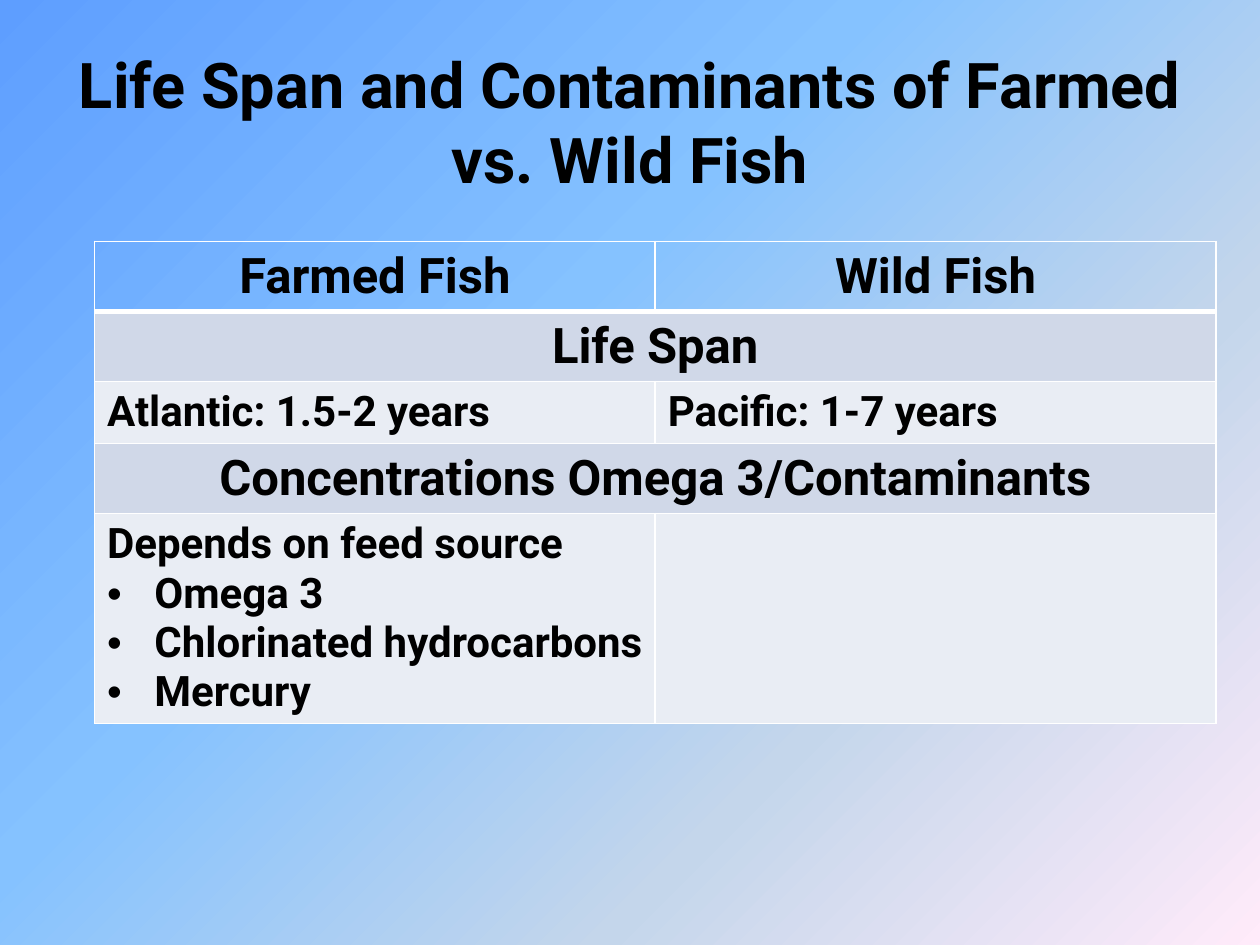
from lxml.etree import SubElement
from pptx import Presentation
from pptx.dml.color import RGBColor
from pptx.enum.text import MSO_ANCHOR, PP_ALIGN
from pptx.oxml.ns import qn
from pptx.util import Pt

TITLE = "Life Span and Contaminants of Farmed vs. Wild Fish"
HEADER = ("Farmed Fish", "Wild Fish")
LIFE_SPAN = ("Atlantic: 1.5-2 years", "Pacific: 1-7 years")
FEED = "Depends on feed source\n• Omega 3\n• Chlorinated hydrocarbons\n• Mercury"
# rows: texts, height, fill, size, centred
ROWS = [
    (HEADER, 40, None, 28, True),
    (("Life Span",), 40, "D0D8E8", 28, True),
    (LIFE_SPAN, 35.4, "E9EDF4", 24, False),
    (("Concentrations Omega 3/Contaminants",), 40, "D0D8E8", 28, True),
    ((FEED, ""), 120, "E9EDF4", 24, False),
]
GRADIENT = [(0, "5E9EFF"), (40, "85C2FF"), (70, "C4D6EB"), (100, "FFEBFA")]
LEFT, TOP, COL_WIDTH = 54, 138, 320.4
BULLET_INDENT = 27


def color(value):
    return RGBColor.from_string(value)


def paint_background(s):
    s.background.fill.gradient()
    grad = s.background._cSld.find(".//" + qn("a:gradFill"))
    for child in list(grad):
        grad.remove(child)
    stops = SubElement(grad, qn("a:gsLst"))
    for pos, value in GRADIENT:
        stop = SubElement(stops, qn("a:gs"), pos=str(pos * 1000))
        SubElement(stop, qn("a:srgbClr"), val=value)
    SubElement(grad, qn("a:lin"), ang=str(45 * 60000), scaled="0")


def write(p, text, size, align):
    p.text = text
    p.alignment = align
    for r in p.runs:
        r.font.name = "Roboto"
        r.font.size = Pt(size)
        r.font.bold = True
        r.font.color.rgb = color("000000")


def add_bullet(p):
    pPr = p._p.get_or_add_pPr()
    pPr.set("marL", str(Pt(BULLET_INDENT)))
    pPr.set("indent", str(-Pt(BULLET_INDENT)))
    SubElement(pPr, qn("a:buFont"), typeface="Arial")
    SubElement(pPr, qn("a:buChar"), char="•")


def add_borders(cell, top, bottom):
    tcPr = cell._tc.get_or_add_tcPr()
    for side, width in (("L", 1), ("R", 1), ("T", top), ("B", bottom)):
        ln = SubElement(tcPr, qn("a:ln" + side), w=str(Pt(width)))
        SubElement(SubElement(ln, qn("a:solidFill")), qn("a:srgbClr"), val="FFFFFF")


def fill_cell(cell, text, size, align):
    tf = cell.text_frame
    for i, line in enumerate(text.split("\n")):
        p = tf.paragraphs[0] if i == 0 else tf.add_paragraph()
        write(p, line.removeprefix("• "), size, align)
        if line.startswith("• "):
            add_bullet(p)


def add_fish_table(s):
    height = sum(row[1] for row in ROWS)
    table = s.shapes.add_table(len(ROWS), 2, Pt(LEFT), Pt(TOP),
                               Pt(2 * COL_WIDTH), Pt(height)).table
    for col in table.columns:
        col.width = Pt(COL_WIDTH)
    for i, (texts, row_height, fill, size, centred) in enumerate(ROWS):
        table.rows[i].height = Pt(row_height)
        align = PP_ALIGN.CENTER if centred else PP_ALIGN.LEFT
        for j in range(2):
            cell = table.cell(i, j)
            add_borders(cell, 3 if i == 1 else 1, 3 if i == 0 else 1)
            if fill:
                cell.fill.solid()
                cell.fill.fore_color.rgb = color(fill)
            else:
                cell.fill.background()
        if len(texts) == 1:
            table.cell(i, 0).merge(table.cell(i, 1))
        for j, text in enumerate(texts):
            fill_cell(table.cell(i, j), text, size, align)


def main():
    """Build the farmed versus wild fish slide."""
    prs = Presentation()
    prs.slide_width, prs.slide_height = Pt(720), Pt(540)
    s = prs.slides.add_slide(prs.slide_layouts[5])
    paint_background(s)
    title = s.shapes.title
    title.left, title.top, title.width, title.height = Pt(36), Pt(24), Pt(648), Pt(90)
    title.text_frame.vertical_anchor = MSO_ANCHOR.MIDDLE
    write(title.text_frame.paragraphs[0], TITLE, 36, PP_ALIGN.CENTER)
    add_fish_table(s)
    prs.save("out.pptx")


if __name__ == "__main__":
    main()
